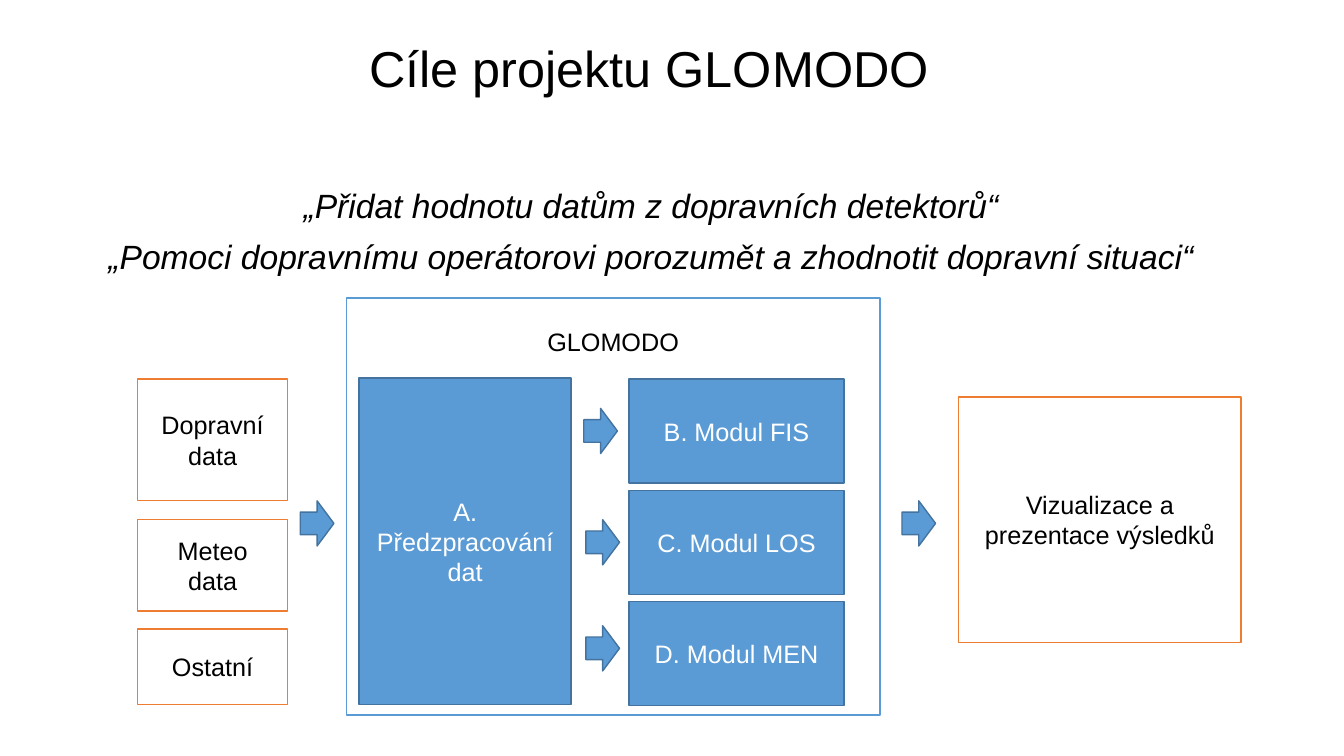
"""Builds the slide on the goals of the GLOMODO project."""
import dataclasses

import pptx
import pptx.dml.color
import pptx.enum.shapes
import pptx.enum.text
import pptx.util

EMU_PER_PX = 9525
RECTANGLE = pptx.enum.shapes.MSO_SHAPE.RECTANGLE
ARROW = pptx.enum.shapes.MSO_SHAPE.RIGHT_ARROW
LEFT = pptx.enum.text.PP_ALIGN.LEFT
CENTER = pptx.enum.text.PP_ALIGN.CENTER
TOP = pptx.enum.text.MSO_ANCHOR.TOP
MIDDLE = pptx.enum.text.MSO_ANCHOR.MIDDLE


@dataclasses.dataclass(frozen=True)
class Theme:
    font: str = "Arial"
    title_size: int = 36
    goal_size: int = 24
    label_size: int = 18
    line_width: int = 1
    black: str = "000000"
    white: str = "FFFFFF"
    blue: str = "5B9BD5"
    dark_blue: str = "43739E"
    orange: str = "ED7D31"


THEME = Theme()


@dataclasses.dataclass(frozen=True)
class BlockStyle:
    fill: str
    line: str
    text: str


SOLID = BlockStyle(THEME.blue, THEME.dark_blue, THEME.white)
EXTERNAL = BlockStyle(THEME.white, THEME.orange, THEME.black)
SYSTEM = BlockStyle(THEME.white, THEME.blue, THEME.black)


def px(length):
    return pptx.util.Emu(length * EMU_PER_PX)


def rgb(color):
    return pptx.dml.color.RGBColor.from_string(color)


def write_lines(text_frame, lines, size, color, alignment=CENTER):
    text_frame.word_wrap = True
    text_frame.text = "\n".join(lines)
    for paragraph in text_frame.paragraphs:
        paragraph.alignment = alignment
        paragraph.font.name = THEME.font
        paragraph.font.size = pptx.util.Pt(size)
        paragraph.font.color.rgb = rgb(color)


def add_text(slide, frame, lines, size, alignment, italic=False):
    text_frame = slide.shapes.add_textbox(*map(px, frame)).text_frame
    write_lines(text_frame, lines, size, THEME.black, alignment)
    for index, paragraph in enumerate(text_frame.paragraphs):
        paragraph.line_spacing = 0.9
        paragraph.font.italic = italic
        if index:
            paragraph.space_before = pptx.util.Pt(10)


def add_shape(slide, preset, frame, style):
    shape = slide.shapes.add_shape(preset, *map(px, frame))
    shape.shadow.inherit = False
    shape.fill.solid()
    shape.fill.fore_color.rgb = rgb(style.fill)
    shape.line.color.rgb = rgb(style.line)
    shape.line.width = pptx.util.Pt(THEME.line_width)
    return shape


def add_block(slide, frame, lines, style, anchor=MIDDLE):
    block = add_shape(slide, RECTANGLE, frame, style)
    write_lines(block.text_frame, lines, THEME.label_size, style.text)
    block.text_frame.vertical_anchor = anchor
    return block


def add_arrow(slide, left, top):
    add_shape(slide, ARROW, (left, top, 32, 43), SOLID)


def main():
    presentation = pptx.Presentation()
    presentation.slide_width = px(1280)
    presentation.slide_height = px(720)
    slide = presentation.slides.add_slide(presentation.slide_layouts[6])

    add_text(slide, (342, 37, 900, 119), ["Cíle projektu GLOMODO"],
             THEME.title_size, LEFT)
    goals = [
        "„Přidat hodnotu datům z\u00a0dopravních detektorů“",
        "„Pomoci dopravnímu operátorovi porozumět a zhodnotit dopravní situaci“",
    ]
    add_text(slide, (23, 176, 1194, 141), goals, THEME.goal_size, CENTER,
             italic=True)

    system = add_block(slide, (330, 284, 508, 397), ["GLOMODO"], SYSTEM, TOP)
    system.text_frame.margin_top = px(27)

    inputs = [
        (361, 116, ["Dopravní", "data"]),
        (495, 87, ["Meteo", "data"]),
        (599, 72, ["Ostatní"]),
    ]
    for top, height, lines in inputs:
        add_block(slide, (131, top, 143, height), lines, EXTERNAL)

    add_block(slide, (342, 360, 202, 311), ["A. Předzpracování dat"], SOLID)
    for index, module in enumerate(["B. Modul FIS", "C. Modul LOS", "D. Modul MEN"]):
        add_block(slide, (599, 361 + 106 * index, 205, 99), [module], SOLID)
    add_block(slide, (913, 378, 269, 234), ["Vizualizace a prezentace výsledků"],
              EXTERNAL)

    for left, top in [(286, 477), (859, 477), (556, 389), (558, 495), (558, 596)]:
        add_arrow(slide, left, top)

    presentation.save("out.pptx")


if __name__ == "__main__":
    main()
